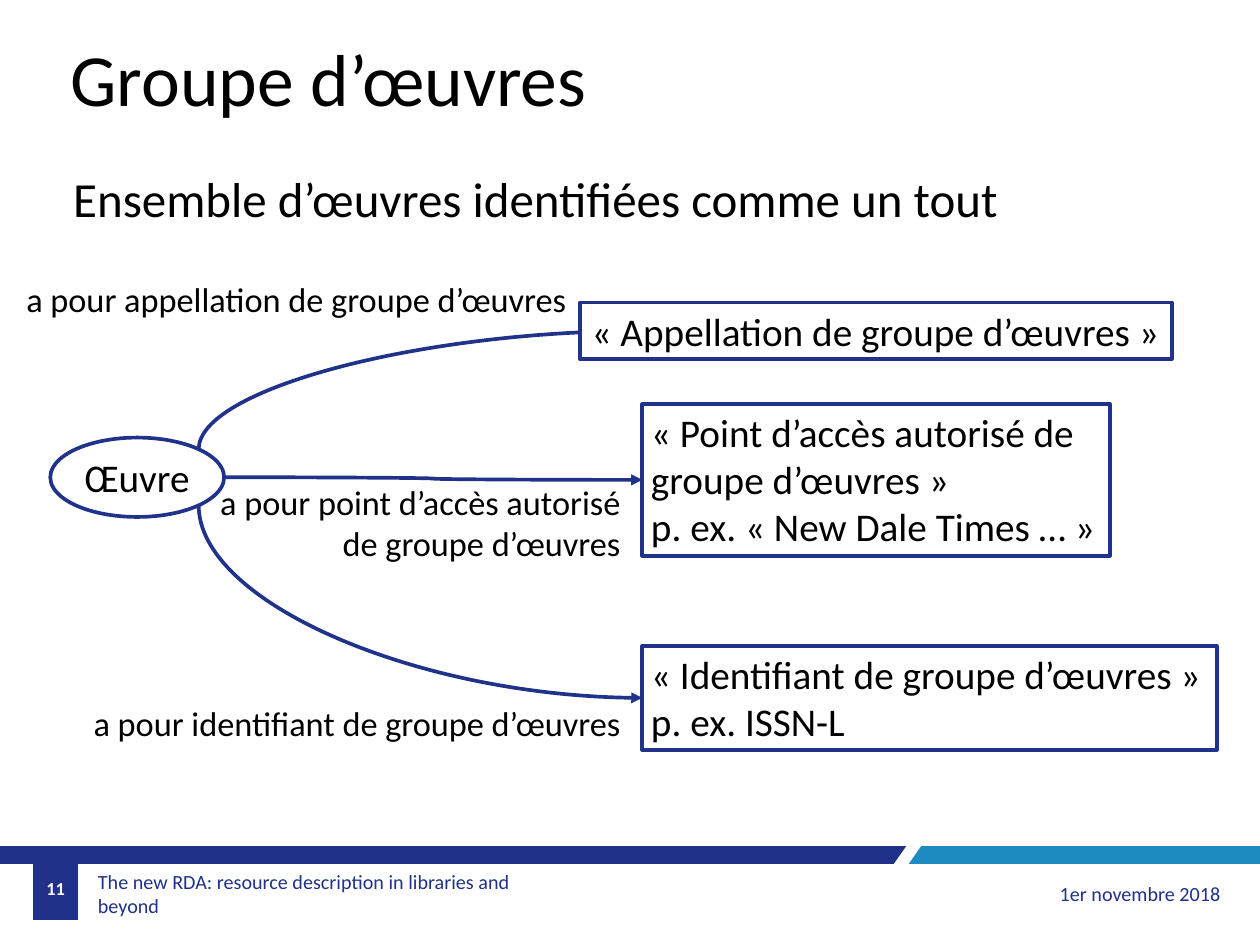
from math import sqrt

from lxml.etree import SubElement
from pptx import Presentation
from pptx.dml.color import RGBColor
from pptx.enum.shapes import MSO_CONNECTOR, MSO_SHAPE
from pptx.enum.text import MSO_ANCHOR, MSO_AUTO_SIZE, PP_ALIGN
from pptx.oxml.ns import qn
from pptx.util import Inches, Pt

WIDTH, HEIGHT = 14.28, 10.71
COLUMNS = 100  # the grid cells are square: 100 columns by 75 rows
CELL = WIDTH / COLUMNS
COLORS = {"navy": "203189", "line": "21328A", "blue": "1D8BC1",
          "white": "FFFFFF", "black": "000000"}


def cells(*counts):
    return [Inches(count * CELL) for count in counts]


def color(name):
    return RGBColor.from_string(COLORS[name])


class SlideBuilder:
    """Draws styled elements on one slide, placed in grid cells."""

    font_name = "Calibri"
    line_width = Pt(3)

    def __init__(self, slide):
        self.slide = slide
        self.shapes = slide.shapes

    def fill_text(self, shape, lines, size, font_color="black", bold=False,
                  align=PP_ALIGN.LEFT, anchor=MSO_ANCHOR.TOP, wrap=True, inset=0.1):
        frame = shape.text_frame
        frame_format = {"auto_size": MSO_AUTO_SIZE.NONE, "word_wrap": wrap,
                        "vertical_anchor": anchor,
                        "margin_left": Inches(inset), "margin_right": Inches(inset)}
        for name, value in frame_format.items():
            setattr(frame, name, value)
        font_format = {"name": self.font_name, "size": Pt(size), "bold": bold}
        for index, line in enumerate(lines):
            paragraph = frame.add_paragraph() if index else frame.paragraphs[0]
            paragraph.alignment = align
            paragraph.space_before = Pt(0)
            run = paragraph.add_run()
            run.text = line
            for name, value in font_format.items():
                setattr(run.font, name, value)
            run.font.color.rgb = color(font_color)

    def placeholder(self, index, place, text, size):
        shape = self.slide.placeholders[index]
        shape.left, shape.top, shape.width, shape.height = cells(*place)
        self.fill_text(shape, [text], size)
        return shape

    def title(self, place, text):
        self.placeholder(0, place, text, 60)

    def body(self, place, text):
        shape = self.placeholder(1, place, text, 40)
        properties = shape.text_frame.paragraphs[0]._p.get_or_add_pPr()
        properties.set("marL", "0")
        properties.set("indent", "0")
        SubElement(properties, qn("a:buNone"))

    def text(self, place, lines, size=28, **style):
        self.fill_text(self.shapes.add_textbox(*cells(*place)), lines, size, **style)

    def node(self, kind, place, lines, **style):
        shape = self.shapes.add_shape(kind, *cells(*place))
        shape.shadow.inherit = False
        shape.fill.solid()
        shape.fill.fore_color.rgb = color("white")
        shape.line.color.rgb = color("line")
        shape.line.width = self.line_width
        self.fill_text(shape, lines, 32, **style)

    def band(self, points, fill):
        corners = [cells(*point) for point in points]
        builder = self.shapes.build_freeform(*corners[0])
        builder.add_line_segments(corners[1:], close=True)
        shape = builder.convert_to_shape()
        shape.shadow.inherit = False
        shape.fill.solid()
        shape.fill.fore_color.rgb = color(fill)
        shape.line.fill.background()

    def curve(self, box_side, work_side, preset):
        """Draws from the box back to the work, with the arrowhead at the box."""
        connector = self.shapes.add_connector(
            MSO_CONNECTOR.CURVE, *cells(*box_side, *work_side))
        connector.line.color.rgb = color("line")
        connector.line.width = self.line_width
        properties = connector._element.spPr
        properties.find(qn("a:prstGeom")).set("prst", preset)
        SubElement(properties.find(qn("a:ln")), qn("a:headEnd"), type="triangle")
        SubElement(properties, qn("a:effectLst"))


def draw_footer(builder):
    top, bottom = 67.16, 68.56
    builder.band([(0, top), (71.92, top), (70.94, bottom), (0, bottom)], "navy")
    builder.band([(73.11, top), (COLUMNS, top), (COLUMNS, bottom), (72.13, bottom)],
                 "blue")
    builder.band([(2.59, top), (6.23, top), (6.23, 73.04), (2.59, 73.04)], "navy")
    middle = {"anchor": MSO_ANCHOR.MIDDLE}
    builder.text((7.28, 68.98, 38.66, 3.85),
                 ["The new RDA: resource description in libraries and beyond"],
                 16.4, font_color="navy", inset=0.07, **middle)
    builder.text((71.92, 68.98, 25.63, 3.85), ["1er novembre 2018"], 16.4,
                 font_color="navy", align=PP_ALIGN.RIGHT, **middle)
    builder.text((2.59, 68.56, 3.64, 3.85), ["11"], 14.9, font_color="white",
                 bold=True, align=PP_ALIGN.CENTER, **middle)


def draw_diagram(builder):
    work = left, top, width, height = 3.99, 34.73, 13.8, 6.3
    center_x, center_y = left + width / 2, top + height / 2
    diagonal_x = center_x + width / 2 / sqrt(2)
    rise = height / 2 / sqrt(2)
    box_left = 50.98
    name_box = (46.01, 24.02, 46.99, 4.48)
    access_box = (box_left, 32.07, 37.11, 12.04)
    identifier_box = (box_left, 51.26, 45.59, 8.26)

    curves = [
        (name_box, (diagonal_x, center_y - rise), "curvedConnector2"),
        (access_box, (left + width, center_y), "curvedConnector3"),
        (identifier_box, (diagonal_x, center_y + rise), "curvedConnector2"),
    ]
    for box, work_side, preset in curves:
        builder.curve((box_left, box[1] + box[3] / 2), work_side, preset)

    centered = {"align": PP_ALIGN.CENTER, "anchor": MSO_ANCHOR.MIDDLE}
    builder.node(MSO_SHAPE.OVAL, work, ["Œuvre"], wrap=False, **centered)
    builder.node(MSO_SHAPE.RECTANGLE, name_box,
                 ["« Appellation de groupe d’œuvres »"], **centered)
    builder.node(MSO_SHAPE.RECTANGLE, access_box,
                 ["« Point d’accès autorisé de groupe d’œuvres »",
                  "p. ex. « New Dale Times … »"])
    builder.node(MSO_SHAPE.RECTANGLE, identifier_box,
                 ["« Identifiant de groupe d’œuvres »", "p. ex. ISSN-L"])

    builder.text((1.4, 21.71, 45.38, 3.99), ["a pour appellation de groupe d’œuvres"])
    builder.text((15, 37.82, 34.93, 7.28),
                 ["a pour point d’accès autorisé", "de groupe d’œuvres"],
                 align=PP_ALIGN.RIGHT)
    builder.text((4, 55.39, 45.93, 3.99), ["a pour identifiant de groupe d’œuvres"],
                 align=PP_ALIGN.RIGHT)


def main():
    presentation = Presentation()
    presentation.slide_width = Inches(WIDTH)
    presentation.slide_height = Inches(HEIGHT)
    slide = presentation.slides.add_slide(presentation.slide_layouts[1])
    builder = SlideBuilder(slide)
    builder.title((4.9, 2.24, 90, 7.77), "Groupe d’œuvres")
    builder.body((5.11, 13.03, 80, 5.39), "Ensemble d’œuvres identifiées comme un tout")
    draw_footer(builder)
    draw_diagram(builder)
    presentation.save("out.pptx")


if __name__ == "__main__":
    main()
